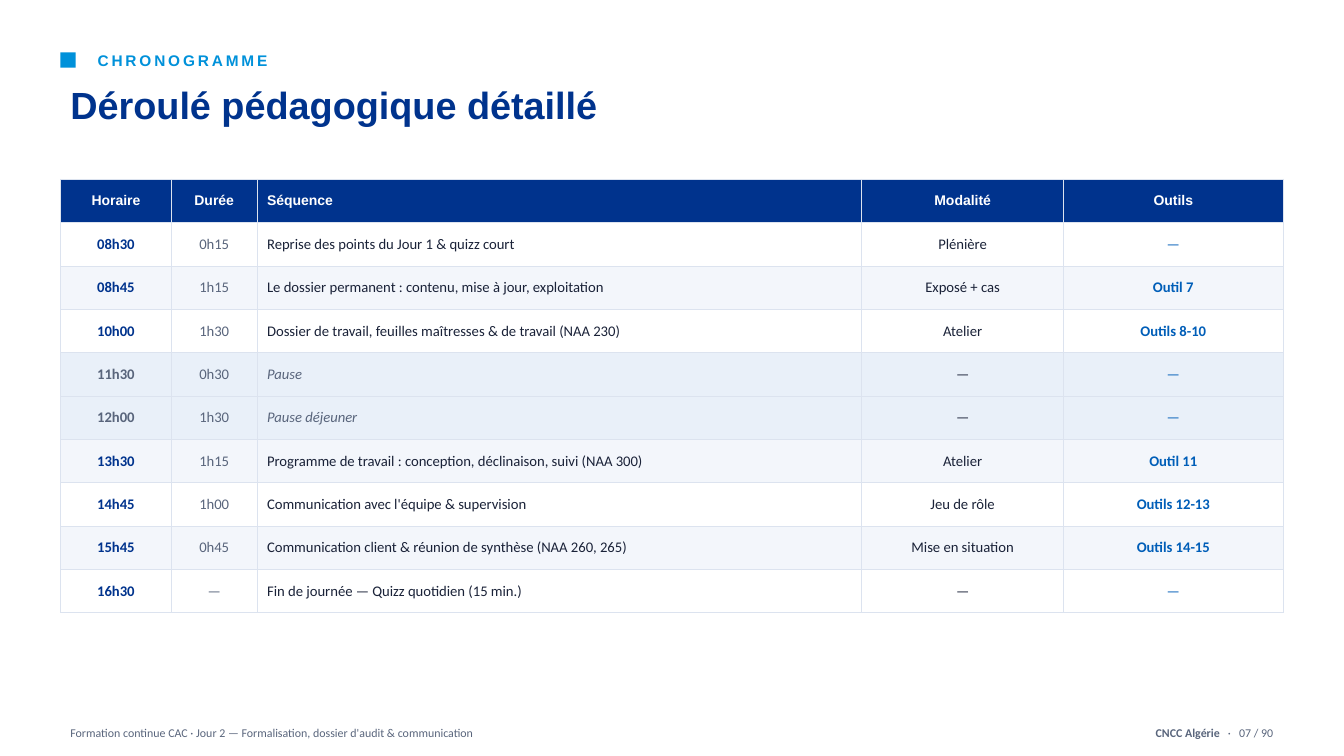
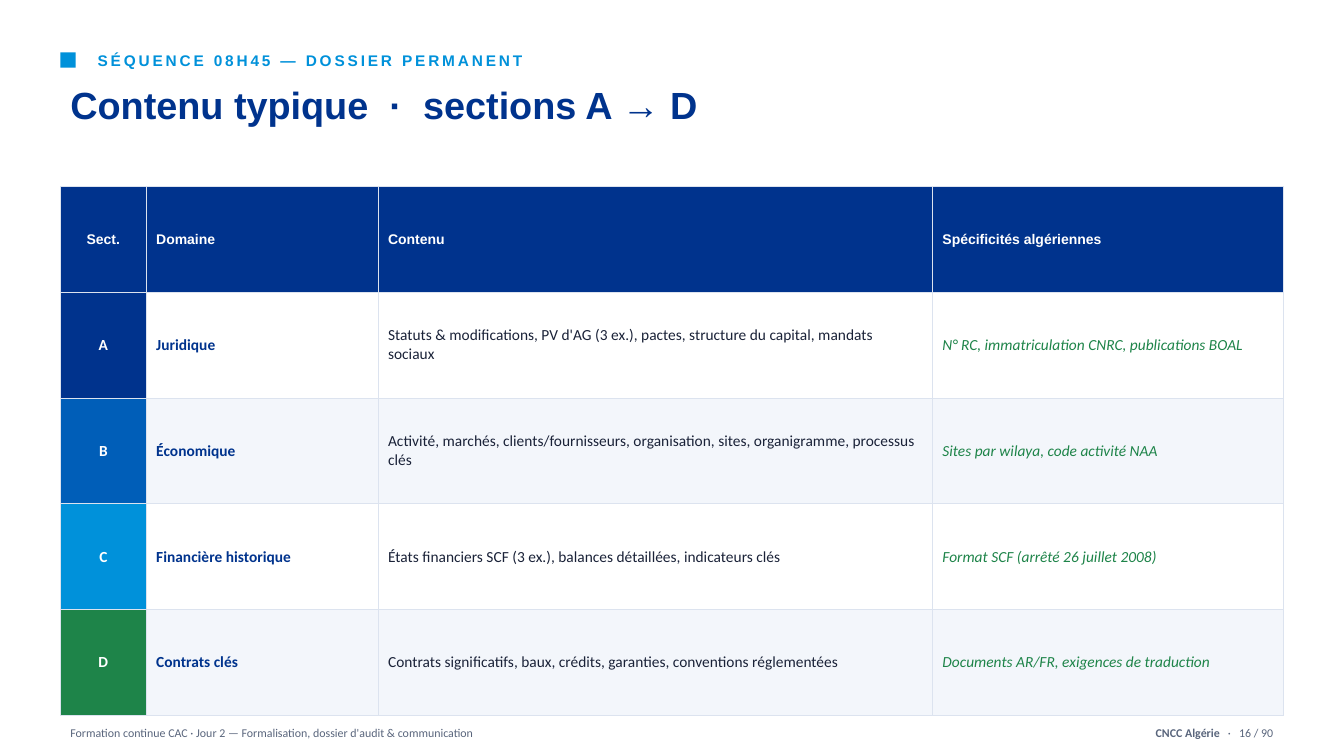
from dataclasses import dataclass
from typing import NamedTuple

from lxml.etree import SubElement
from pptx import Presentation
from pptx.dml.color import RGBColor
from pptx.enum.shapes import MSO_SHAPE as Shape
from pptx.enum.text import MSO_ANCHOR as Anchor, PP_ALIGN as Align
from pptx.oxml.ns import qn
from pptx.util import Pt

rgb = RGBColor.from_string


class Box(NamedTuple):
    left: float
    top: float
    width: float
    height: float

    def inner(self, x, y, width, height):
        return Box(self.left + x, self.top + y, width, height)

    def points(self):
        return [Pt(n) for n in self]


class Look(NamedTuple):
    face: str
    size: float
    color: str
    bold: bool = False
    italic: bool = False
    align: Align = Align.LEFT


class Run(NamedTuple):
    text: str
    bold: bool | None = None
    track: float = 0


@dataclass(frozen=True)
class Theme:
    navy: str = "00338D"
    blue: str = "005EB8"
    sky: str = "0091DA"
    green: str = "1E8449"
    ink: str = "1A2238"
    gray: str = "59657C"
    white: str = "FFFFFF"
    pale: str = "F3F6FB"
    rest: str = "E9F0F9"
    rule: str = "DCE3EF"
    head: str = "Arial"
    body: str = "Calibri"
    small: float = 8.5
    label: float = 10
    plan: float = 10.5
    text: float = 11
    title: float = 27
    line: float = 0.75

    def band(self, index):
        return self.pale if index % 2 else self.white


T = Theme()
PAGE = Box(0, 0, 960, 540)
EDGE = 43.2
WIDE = 873.36
HEAD = PAGE.inner(EDGE, 33.12, WIDE, 91.44)
FOOT = PAGE.inner(EDGE, 512.64, WIDE, 21.6)


def write(par, runs, look):
    par.alignment = look.align
    font = par.font
    font.name, font.size = look.face, Pt(look.size)
    font.bold, font.italic = look.bold, look.italic
    font.color.rgb = rgb(look.color)
    for item in runs:
        run = par.add_run()
        run.text = item.text
        if item.bold is not None:
            run.font.bold = item.bold
        if item.track:
            run.font._element.set("spc", str(round(item.track * 100)))


def label(slide, box, runs, look, anchor=Anchor.MIDDLE):
    frame = slide.shapes.add_textbox(*box.points()).text_frame
    frame.word_wrap = True
    frame.vertical_anchor = anchor
    par = frame.paragraphs[0]
    write(par, runs, look)
    return par


def header(slide, box, topic, title):
    mark = slide.shapes.add_shape(
        Shape.RECTANGLE, *box.inner(0, 4.32, 10.8, 10.8).points())
    mark.shadow.inherit = False
    mark.fill.solid()
    mark.fill.fore_color.rgb = rgb(T.sky)
    mark.line.fill.background()
    label(slide, box.inner(19.44, 0, box.width - 19.44, 20.16),
          [Run(topic, track=2)], Look(T.head, T.text, T.sky, True))
    par = label(slide, box.inner(0, 23.04, box.width, 68.4), title,
                Look(T.head, T.title, T.navy, True), Anchor.TOP)
    par.line_spacing = 0.98


def footer(slide, box, page):
    look = Look(T.body, T.small, T.gray)
    course = ("Formation continue CAC · Jour 2 — "
              "Formalisation, dossier d'audit & communication")
    label(slide, box.inner(0, 0, 684, box.height), [Run(course)], look)
    side = 223.2
    label(slide, box.inner(box.width - side, 0, side, box.height),
          [Run("CNCC Algérie", True), Run(" ·", track=3.8),
           Run(f" {page:02} / 90")],
          look._replace(align=Align.RIGHT))


def border(cell):
    props = cell._tc.get_or_add_tcPr()
    for side in ("lnL", "lnR", "lnT", "lnB"):
        line = SubElement(props, qn(f"a:{side}"), w=str(Pt(T.line)))
        fill = SubElement(line, qn("a:solidFill"))
        SubElement(fill, qn("a:srgbClr"), val=T.rule)


def grid(slide, box, widths, rows):
    table = slide.shapes.add_table(
        len(rows), len(widths), *box.points()).table
    for col, width in zip(table.columns, widths):
        col.width = Pt(width)
    for r, row in enumerate(rows):
        table.rows[r].height = Pt(box.height / len(rows))
        for c, (text, look, fill) in enumerate(row):
            cell = table.cell(r, c)
            border(cell)
            cell.fill.solid()
            cell.fill.fore_color.rgb = rgb(fill)
            cell.vertical_anchor = Anchor.MIDDLE
            write(cell.text_frame.paragraphs[0], [Run(text)], look)


def heads(names, aligns):
    look = Look(T.head, T.label, T.white, True)
    return [(name, look._replace(align=align), T.navy)
            for name, align in zip(names, aligns)]


def agenda(slide, box, names, steps):
    mid = Align.CENTER
    base = Look(T.body, T.plan, T.ink)
    rows = [heads(names, (mid, mid, Align.LEFT, mid, mid))]
    for index, step in enumerate(steps):
        pause = step[2].startswith("Pause")
        fill = T.rest if pause else T.band(index)
        looks = (
            base._replace(color=T.gray if pause else T.navy,
                          bold=True, align=mid),
            base._replace(color=T.gray, align=mid),
            base._replace(color=T.gray if pause else T.ink, italic=pause),
            base._replace(align=mid),
            base._replace(color=T.blue, bold=step[4] != "—", align=mid),
        )
        rows.append([(text, look, fill) for text, look in zip(step, looks)])
    grid(slide, box, (79.2, 61.2, 432, 144, 156.96), rows)


def dossier(slide, box, names, topics):
    base = Look(T.body, T.text, T.ink)
    looks = (
        base._replace(color=T.white, bold=True, align=Align.CENTER),
        base._replace(color=T.navy, bold=True),
        base,
        base._replace(color=T.green, italic=True),
    )
    tints = (T.navy, T.blue, T.sky, T.green)
    rows = [heads(names, (Align.CENTER, *[Align.LEFT] * 3))]
    for index, (topic, tint) in enumerate(zip(topics, tints)):
        fills = (tint, *[T.band(index)] * 3)
        rows.append(list(zip(topic, looks, fills)))
    grid(slide, box, (61.2, 165.6, 396, 250.56), rows)


STEPS = (
    ("08h30", "0h15", "Reprise des points du Jour 1 & quizz court",
     "Plénière", "—"),
    ("08h45", "1h15",
     "Le dossier permanent : contenu, mise à jour, exploitation",
     "Exposé + cas", "Outil 7"),
    ("10h00", "1h30",
     "Dossier de travail, feuilles maîtresses & de travail (NAA 230)",
     "Atelier", "Outils 8-10"),
    ("11h30", "0h30", "Pause", "—", "—"),
    ("12h00", "1h30", "Pause déjeuner", "—", "—"),
    ("13h30", "1h15",
     "Programme de travail : conception, déclinaison, suivi (NAA 300)",
     "Atelier", "Outil 11"),
    ("14h45", "1h00", "Communication avec l'équipe & supervision",
     "Jeu de rôle", "Outils 12-13"),
    ("15h45", "0h45",
     "Communication client & réunion de synthèse (NAA 260, 265)",
     "Mise en situation", "Outils 14-15"),
    ("16h30", "—", "Fin de journée — Quizz quotidien (15 min.)", "—", "—"),
)

TOPICS = (
    ("A", "Juridique",
     "Statuts & modifications, PV d'AG (3 ex.), pactes, "
     "structure du capital, mandats sociaux",
     "N° RC, immatriculation CNRC, publications BOAL"),
    ("B", "Économique",
     "Activité, marchés, clients/fournisseurs, organisation, sites, "
     "organigramme, processus clés",
     "Sites par wilaya, code activité NAA"),
    ("C", "Financière historique",
     "États financiers SCF (3 ex.), balances détaillées, indicateurs clés",
     "Format SCF (arrêté 26 juillet 2008)"),
    ("D", "Contrats clés",
     "Contrats significatifs, baux, crédits, garanties, "
     "conventions réglementées",
     "Documents AR/FR, exigences de traduction"),
)


def start(deck, topic, title, page):
    slide = deck.slides.add_slide(deck.slide_layouts[6])
    header(slide, HEAD, topic, title)
    footer(slide, FOOT, page)
    return slide


def main():
    deck = Presentation()
    deck.slide_width, deck.slide_height = Pt(PAGE.width), Pt(PAGE.height)

    slide = start(deck, "CHRONOGRAMME",
                  [Run("Déroulé pédagogique détaillé")], 7)
    agenda(slide, PAGE.inner(EDGE, 128.16, WIDE, 309.6),
           ("Horaire", "Durée", "Séquence", "Modalité", "Outils"), STEPS)

    slide = start(deck, "SÉQUENCE 08H45 — DOSSIER PERMANENT",
                  [Run("Contenu typique"), Run(" ·", track=7.5),
                   Run(" sections A → D")], 16)
    dossier(slide, PAGE.inner(EDGE, 133.2, WIDE, 378),
            ("Sect.", "Domaine", "Contenu", "Spécificités algériennes"),
            TOPICS)

    deck.save("out.pptx")


if __name__ == "__main__":
    main()
